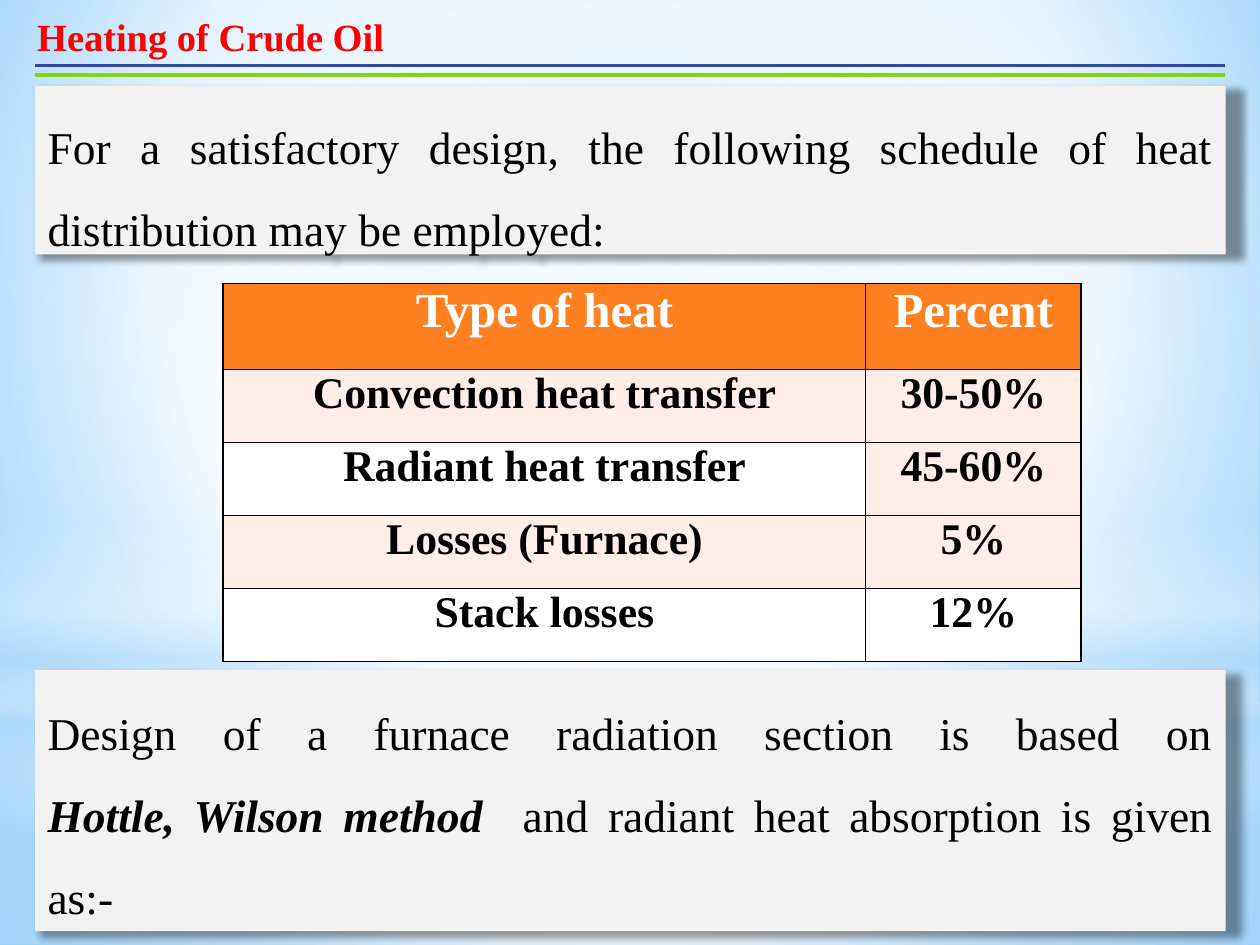
from dataclasses import dataclass

from lxml import etree
from pptx import Presentation
from pptx.dml.color import RGBColor
from pptx.enum.shapes import MSO_CONNECTOR, MSO_SHAPE
from pptx.enum.text import MSO_ANCHOR, MSO_AUTO_SIZE, PP_ALIGN
from pptx.oxml import parse_xml
from pptx.oxml.ns import qn
from pptx.util import Cm, Pt

NS = 'xmlns:a="http://schemas.openxmlformats.org/drawingml/2006/main"'
RECT, OVAL = MSO_SHAPE.RECTANGLE, MSO_SHAPE.OVAL
STRAIGHT = MSO_CONNECTOR.STRAIGHT
CENTER, JUSTIFY, LEFT = PP_ALIGN.CENTER, PP_ALIGN.JUSTIFY, PP_ALIGN.LEFT
TOP, MIDDLE = MSO_ANCHOR.TOP, MSO_ANCHOR.MIDDLE
GROW = MSO_AUTO_SIZE.SHAPE_TO_FIT_TEXT
FONT = "Times New Roman"
WIDTH, HEIGHT = 25.4, 19.05
MARGIN, CONTENT_WIDTH = 0.71, 24
CENTERED = (50, 50, 50, 50)
PINK, WHITE, ORANGE = "FFEDE8", "FFFFFF", "FF8021"


@dataclass
class Glow:
    shape: int
    top: float
    height: float
    stops: list
    focus: tuple | None = CENTERED


@dataclass
class Panel:
    top: float
    height: float
    anchor: int
    runs: list


@dataclass
class Row:
    height: float
    texts: tuple
    fills: tuple
    size: float = 25
    color: str = "000000"


GLOWS = [
    Glow(RECT, 14.17, 4.88, [(0, WHITE, 91), (37, WHITE, 76), (100, "B4DCFA", 79)]),
    Glow(RECT, 0, 14.17, [(0, WHITE, 89), (48, WHITE, 62), (100, "B4DCFA", 79)]),
    Glow(RECT, 10.46, 6.35, [(0, WHITE, 0), (29, WHITE, 30), (45, "B4DCFA", 40),
                             (55, WHITE, 26), (65, "B4DCFA", 60), (100, WHITE, 0)], None),
    Glow(OVAL, 4.45, 14.17, [(0, WHITE, 100), (56, WHITE, 0)]),
]
RULES = [(1.32, "31489F"), (1.52, "81D31A")]
PANELS = [
    Panel(1.73, 3.4, TOP, [("For a satisfactory design, the following schedule of heat "
                            "distribution may be employed:", {})]),
    Panel(13.51, 5.26, MIDDLE, [
        ("Design of a furnace radiation section is based on\v", {}),
        ("Hottle, Wilson method", {"bold": True, "italic": True}),
        ("  and radiant heat absorption is given as:-", {}),
    ]),
]
ROWS = [
    Row(1.73, ("Type of heat", "Percent"), (ORANGE, ORANGE), 28, WHITE),
    Row(1.47, ("Convection heat transfer", "30-50%"), (PINK, PINK)),
    Row(1.47, ("Radiant heat transfer", "45-60%"), (WHITE, PINK)),
    Row(1.47, ("Losses (Furnace)", "5%"), (PINK, PINK)),
    Row(1.47, ("Stack losses", "12%"), (WHITE, WHITE)),
]
COLUMNS = [12.95, 4.34]


def rgb(value: str) -> RGBColor:
    return RGBColor.from_string(value)


def set_attrs(obj, values: dict) -> None:
    for name, value in values.items():
        setattr(obj, name, value)


def add_runs(tf, runs: list, size: float, color: str, align: int) -> None:
    p = tf.paragraphs[0]
    p.alignment = align
    for text, extra in runs:
        r = p.add_run()
        r.text = text.rstrip("\v")
        set_attrs(r.font, {"name": FONT, "size": Pt(size), "bold": False, **extra})
        r.font.color.rgb = rgb(color)
        if text.endswith("\v"):
            p.add_line_break()


def set_gradient(fill, owner, stops: list, focus: tuple | None) -> None:
    fill.solid()
    marks = "".join(
        f'<a:gs pos="{pos * 1000}"><a:srgbClr val="{color}">'
        f'<a:alpha val="{alpha * 1000}"/></a:srgbClr></a:gs>'
        for pos, color, alpha in stops)
    direction = '<a:lin ang="5400000" scaled="0"/>'
    if focus:
        sides = " ".join(f'{side}="{v * 1000}"' for side, v in zip("ltrb", focus))
        direction = f'<a:path path="circle"><a:fillToRect {sides}/></a:path>'
    solid = next(owner.iter(qn("a:solidFill")))
    solid.getparent().replace(solid, parse_xml(
        f'<a:gradFill {NS} rotWithShape="1"><a:gsLst>{marks}</a:gsLst>{direction}</a:gradFill>'))


def add_glow(s, glow: Glow) -> None:
    sp = s.shapes.add_shape(glow.shape, 0, Cm(glow.top), Cm(WIDTH), Cm(glow.height))
    sp.shadow.inherit = False
    sp.line.fill.background()
    set_gradient(sp.fill, sp.element.spPr, glow.stops, glow.focus)


def add_title(s, text: str) -> None:
    tf = s.shapes.add_textbox(Cm(0.5), Cm(0.13), Cm(24), Cm(1.19)).text_frame
    set_attrs(tf, {"word_wrap": True, "auto_size": GROW})
    add_runs(tf, [(text, {"bold": True})], 22, "FF0000", LEFT)


def add_rule(s, y: float, color: str) -> None:
    line = s.shapes.add_connector(STRAIGHT, Cm(MARGIN), Cm(y), Cm(WIDTH - MARGIN), Cm(y))
    line.line.color.rgb = rgb(color)
    line.line.width = Pt(2.25)
    etree.SubElement(line.element.spPr, qn("a:effectLst"))


def add_panel(s, panel: Panel) -> None:
    sp = s.shapes.add_shape(RECT, Cm(MARGIN), Cm(panel.top), Cm(CONTENT_WIDTH), Cm(panel.height))
    sp.shadow.inherit = False
    sp.fill.solid()
    sp.fill.fore_color.rgb = rgb("F2F2F2")
    sp.line.fill.background()
    effects = sp.element.spPr.find(qn("a:effectLst"))
    effects.append(parse_xml(
        f'<a:outerShdw {NS} blurRad="{Pt(4)}" dist="{Pt(3)}" dir="2700000" sx="101000" '
        'sy="101000" algn="tl" rotWithShape="0"><a:srgbClr val="000000">'
        '<a:alpha val="40000"/></a:srgbClr></a:outerShdw>'))
    tf = sp.text_frame
    set_attrs(tf, {"word_wrap": True, "auto_size": GROW, "vertical_anchor": panel.anchor})
    add_runs(tf, panel.runs, 26, "000000", JUSTIFY)
    tf.paragraphs[0].line_spacing = 1.5


def add_borders(cell) -> None:
    tc_pr = cell._tc.get_or_add_tcPr()
    for i, side in enumerate(("lnL", "lnR", "lnT", "lnB")):
        tc_pr.insert(i, parse_xml(
            f'<a:{side} {NS} w="{Pt(1)}"><a:solidFill><a:srgbClr val="000000"/>'
            f'</a:solidFill></a:{side}>'))


def add_heat_table(s, rows: list[Row]) -> None:
    table = s.shapes.add_table(len(rows), len(COLUMNS), Cm(4.5), Cm(5.72),
                               Cm(sum(COLUMNS)), Cm(sum(row.height for row in rows))).table
    set_attrs(table, {"first_row": False, "horz_banding": False})
    for column, width in zip(table.columns, COLUMNS):
        column.width = Cm(width)
    for i, row in enumerate(rows):
        table.rows[i].height = Cm(row.height)
        for j, (text, fill) in enumerate(zip(row.texts, row.fills)):
            cell = table.cell(i, j)
            set_attrs(cell, {"margin_left": Cm(0.18), "margin_right": Cm(0.18),
                             "margin_top": 0, "margin_bottom": 0})
            cell.fill.solid()
            cell.fill.fore_color.rgb = rgb(fill)
            add_borders(cell)
            add_runs(cell.text_frame, [(text, {"bold": True})], row.size, row.color, CENTER)


def main() -> None:
    prs = Presentation()
    prs.slide_width, prs.slide_height = Cm(WIDTH), Cm(HEIGHT)
    s = prs.slides.add_slide(prs.slide_layouts[6])
    set_gradient(s.background.fill, s.element,
                 [(0, "9ED5FF", 100), (60, WHITE, 100), (100, "5BB9FF", 100)], (20, 10, 20, 60))
    for glow in GLOWS:
        add_glow(s, glow)
    add_title(s, "Heating of Crude Oil")
    for y, color in RULES:
        add_rule(s, y, color)
    add_panel(s, PANELS[0])
    add_heat_table(s, ROWS)
    add_panel(s, PANELS[1])
    prs.save("out.pptx")


if __name__ == "__main__":
    main()
